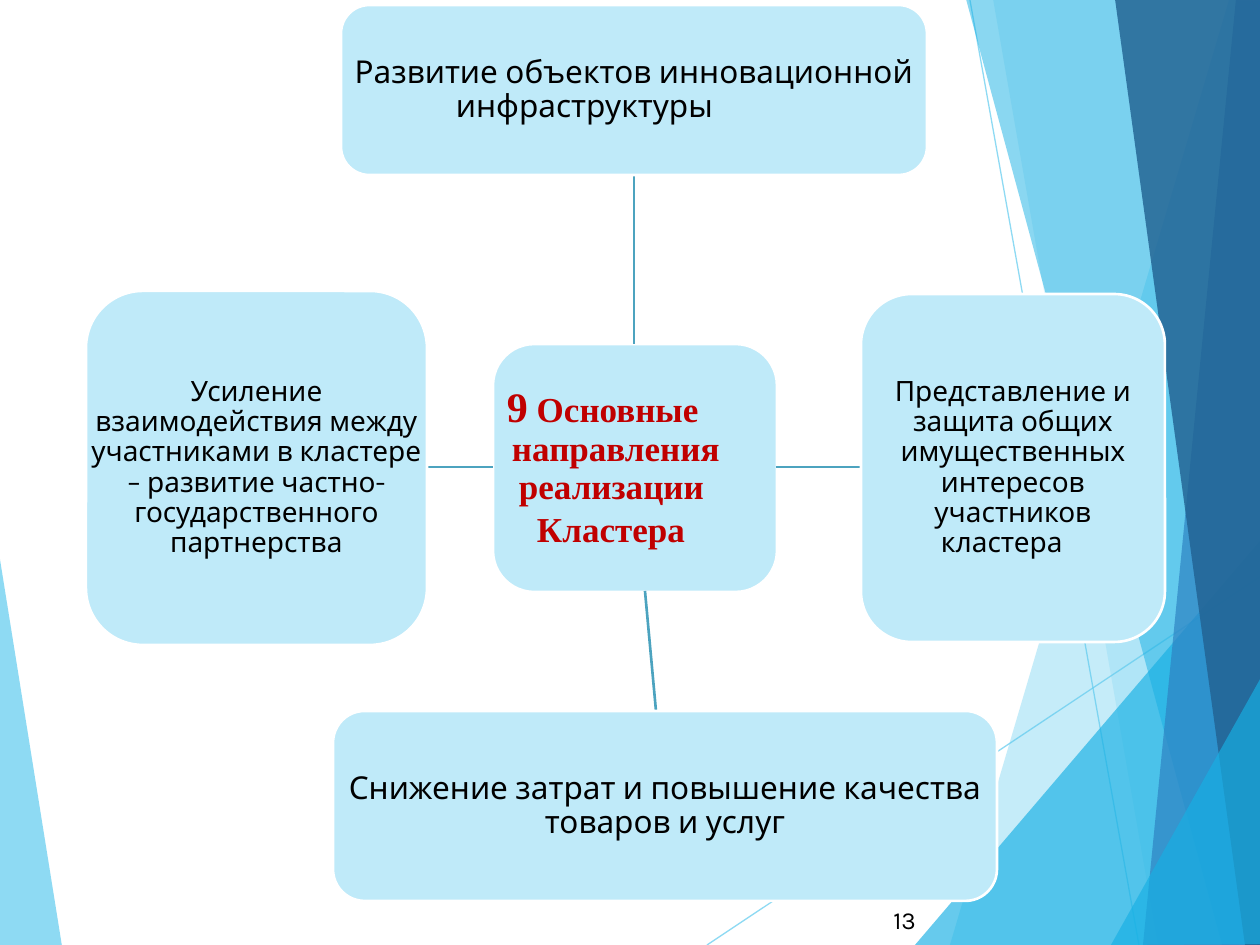
"""Build a slide with four cluster directions around a central box."""
import pptx
import pptx.util
import pptx.dml.color
import pptx.enum.shapes
import pptx.enum.text
import pptx.oxml
import pptx.oxml.ns

RGB = pptx.dml.color.RGBColor
ALIGN = pptx.enum.text.PP_ALIGN
SCALE = 914400 / 126

WHITE = RGB(0xFF, 0xFF, 0xFF)
BLACK = RGB(0, 0, 0)
RED = RGB(0xC0, 0, 0)
PALE = RGB(0xBF, 0xEA, 0xF9)
TEAL = RGB(0x4C, 0xA3, 0xBF)
SKY = RGB(0x5F, 0xCB, 0xEF)
CYAN = RGB(0x17, 0xB0, 0xE4)
BLUE = RGB(0x2E, 0x83, 0xC3)
NAVY = RGB(0x22, 0x62, 0x92)

WEDGES = [
    ([(1229, 0), (950, 945), (1263, 946), (1261, 1)], SKY, 36),
    ([(993, -1), (1158, 945), (1261, 945), (1261, -1)], SKY, 20),
    ([(915, 945), (1260, 541), (1261, 945)], CYAN, 66),
    ([(966, -1), (1222, 945), (1261, 944), (1261, -1)], CYAN, 50),
    ([(1236, -1), (1143, 945), (1261, 945), (1260, -1)], BLUE, 70),
    ([(1115, -1), (1245, 945), (1263, 945), (1260, -1)], NAVY, 82),
    ([(1111, 945), (1263, 674), (1263, 944)], CYAN, 66),
]

CORE = (493, 344, 284, 248)
TITLE = [
    (5, [("9", 24), (" Основные", 20)]),
    (10, [("направления", 20)]),
    (17, [("реализации", 20)]),
    (35, [("Кластера", 20)]),
]
TOPICS = [
    ((341, 5, 586, 170), 6, [
        (None, [("Развитие объектов инновационной", 18)]),
        (109, [("инфраструктуры", 18)])]),
    ((861, 294, 304, 348), 5, [
        (None, [("Представление и защита общих имущественных интересов участников", 16)]),
        (75, [("кластера", 16)])]),
    ((333, 711, 664, 190), 6, [
        (None, [("Снижение затрат и повышение качества товаров и услуг", 18)])]),
    ((86, 291, 341, 354), 4, [
        (None, [("Усиление взаимодействия между участниками в кластере – развитие "
                 "частно-государственного партнерства", 16)])]),
]
LINKS = [
    ((634, 344), (634, 175)),
    ((776, 467), (861, 467)),
    ((645, 591), (656, 711)),
    ((493, 467), (428, 467)),
]


def px(num):
    """Turn pixels into EMU."""
    return pptx.util.Emu(round(num * SCALE))


def fade(part, alpha):
    """Set the opacity, in percent, of the colour inside an XML part."""
    tone = part.find(".//" + pptx.oxml.ns.qn("a:srgbClr"))
    space = pptx.oxml.ns.nsdecls("a")
    tone.append(pptx.oxml.parse_xml(f'<a:alpha {space} val="{alpha * 1000}"/>'))


def wedge(slide, points, color, alpha):
    """Draw a translucent polygon."""
    pen = slide.shapes.build_freeform(*points[0], scale=SCALE)
    pen.add_line_segments(points[1:], close=True)
    shape = pen.convert_to_shape()
    shape.shadow.inherit = False
    shape.fill.solid()
    shape.fill.fore_color.rgb = color
    fade(shape._element.spPr, alpha)
    shape.line.fill.background()


def link(slide, start, end, color=TEAL, width=1.5, alpha=100):
    """Draw a straight line between two points."""
    kind = pptx.enum.shapes.MSO_CONNECTOR.STRAIGHT
    line = slide.shapes.add_connector(kind, *map(px, start + end))
    line.line.color.rgb = color
    line.line.width = pptx.util.Pt(width)
    part = line._element.spPr
    if alpha < 100:
        fade(part, alpha)
    part.append(pptx.oxml.parse_xml(f'<a:effectLst {pptx.oxml.ns.nsdecls("a")}/>'))


def panel(slide, area):
    """Draw a pale rounded box."""
    kind = pptx.enum.shapes.MSO_SHAPE.ROUNDED_RECTANGLE
    shape = slide.shapes.add_shape(kind, *map(px, area))
    shape.shadow.inherit = False
    shape.fill.solid()
    shape.fill.fore_color.rgb = PALE
    shape.line.color.rgb = WHITE
    shape.line.width = pptx.util.Pt(1.5)


def write(slide, area, lines, inset=6, font="Karla", color=BLACK, bold=False,
          align=ALIGN.CENTER, space=0.9, gap=0):
    """Write lines of sized runs; a line with an indent is set from the left."""
    frame = slide.shapes.add_textbox(*map(px, area)).text_frame
    frame.word_wrap = True
    frame.vertical_anchor = pptx.enum.text.MSO_ANCHOR.MIDDLE
    frame.margin_left = frame.margin_right = px(inset)
    frame.margin_top = frame.margin_bottom = px(inset)
    for num, (indent, runs) in enumerate(lines):
        para = frame.add_paragraph() if num else frame.paragraphs[0]
        para.alignment = align
        para.line_spacing = space
        if indent is not None:
            para.alignment = ALIGN.LEFT
            para._p.get_or_add_pPr().set("marL", str(px(indent)))
        for text, size in runs:
            run = para.add_run()
            run.text = text
            run.font.size = pptx.util.Pt(size)
            run.font.name = font
            run.font.bold = bold
            run.font.color.rgb = color
    para.space_before = pptx.util.Pt(gap)


def main():
    """Build and save the slide."""
    deck = pptx.Presentation()
    deck.slide_width, deck.slide_height = px(1260), px(945)
    slide = deck.slides.add_slide(deck.slide_layouts[6])
    wedge(slide, [(-1, 553), (62, 946), (-1, 945)], SKY, 70)
    link(slide, (707, 945), (1261, 576), color=SKY, width=0.75, alpha=70)
    link(slide, (970, 0), (1139, 945), color=SKY, width=0.75, alpha=70)
    for points, color, alpha in WEDGES:
        wedge(slide, points, color, alpha)
    panel(slide, CORE)
    write(slide, CORE, TITLE, inset=9, font="Times New Roman", color=RED,
          bold=True, gap=3)
    for ends, (area, inset, lines) in zip(LINKS, TOPICS):
        link(slide, *ends)
        panel(slide, area)
        write(slide, area, lines, inset=inset)
    write(slide, (858, 895, 71, 50), [(None, [("13", 14)])], inset=13,
          align=ALIGN.RIGHT, space=1.0)
    deck.save("out.pptx")


if __name__ == "__main__":
    main()
